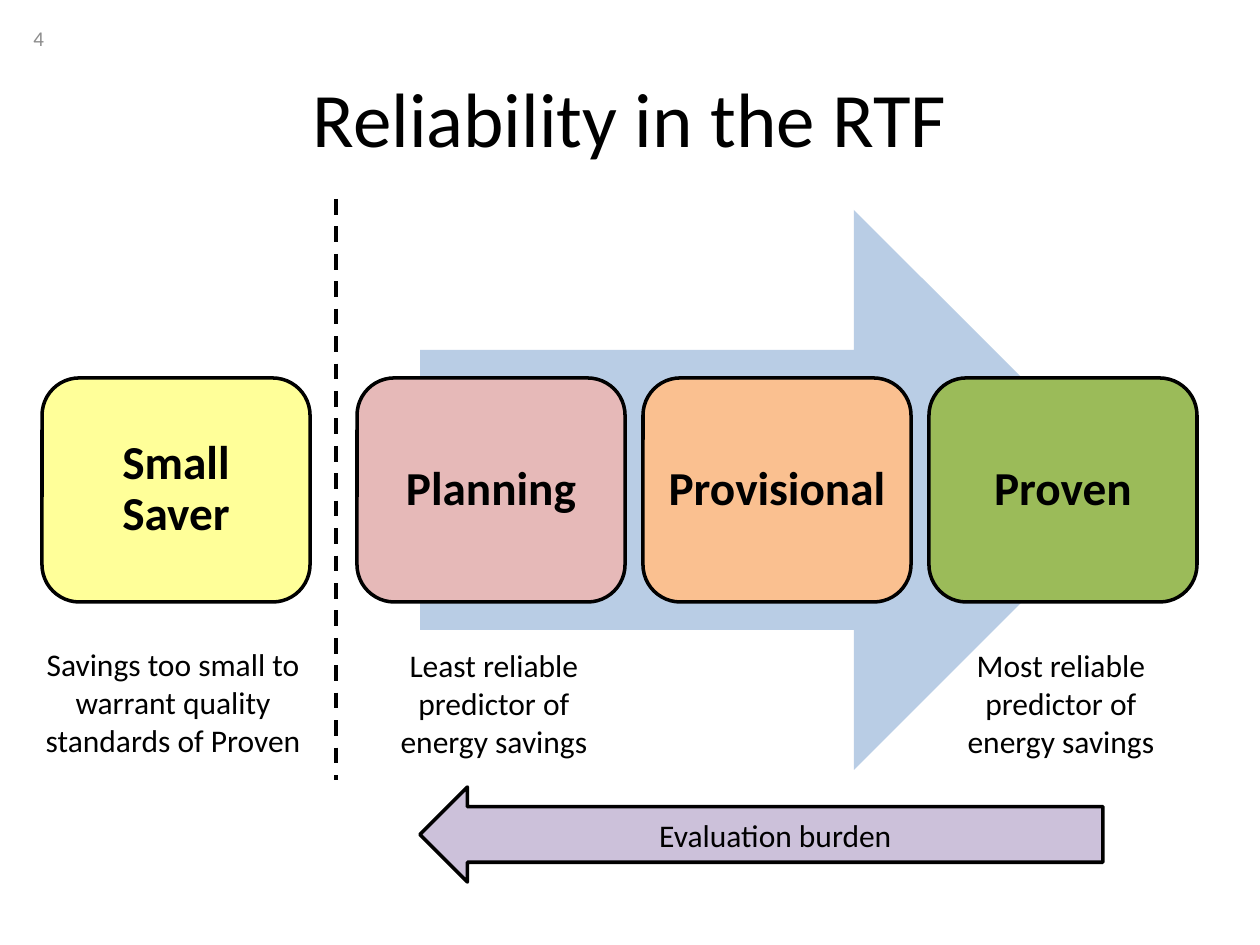
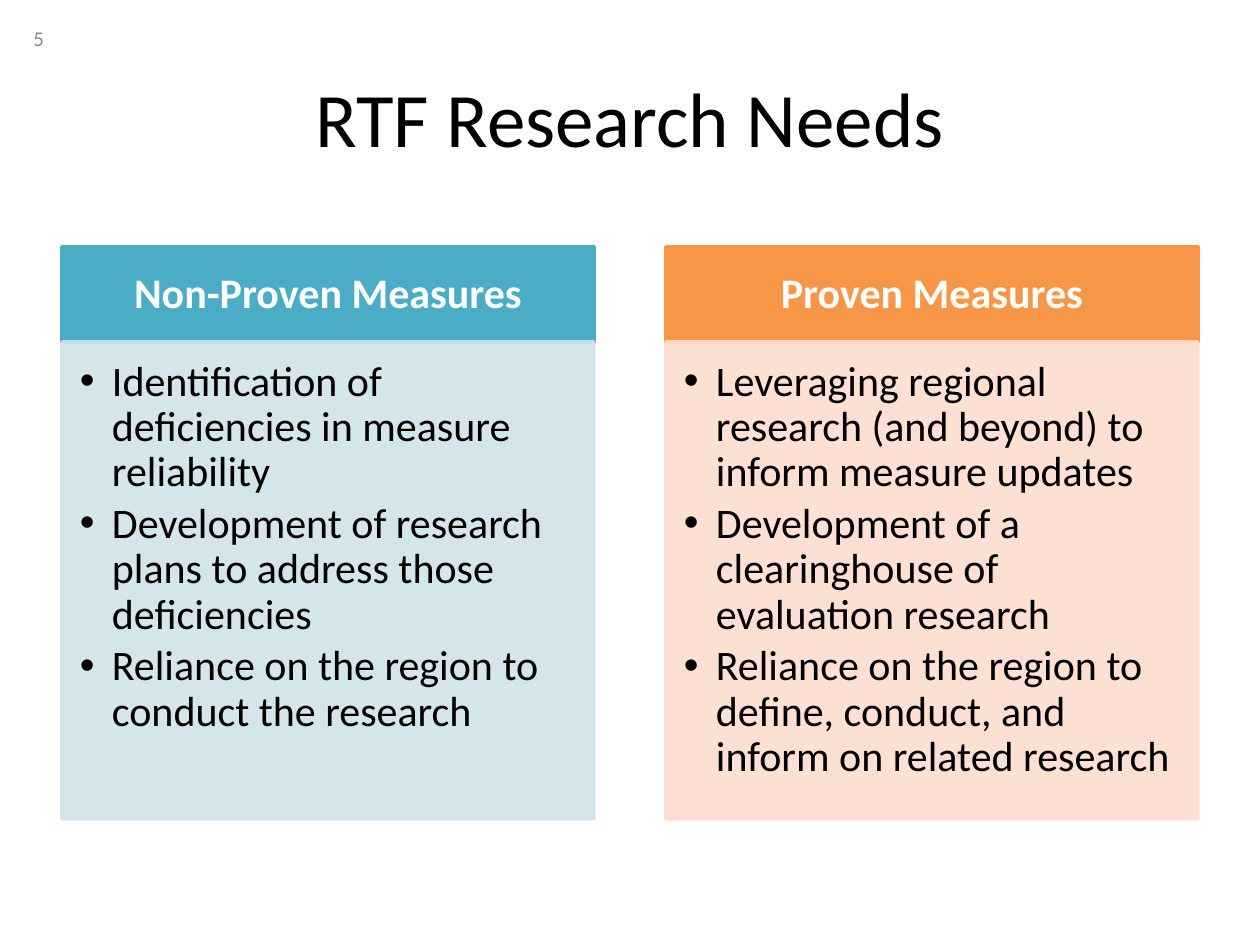
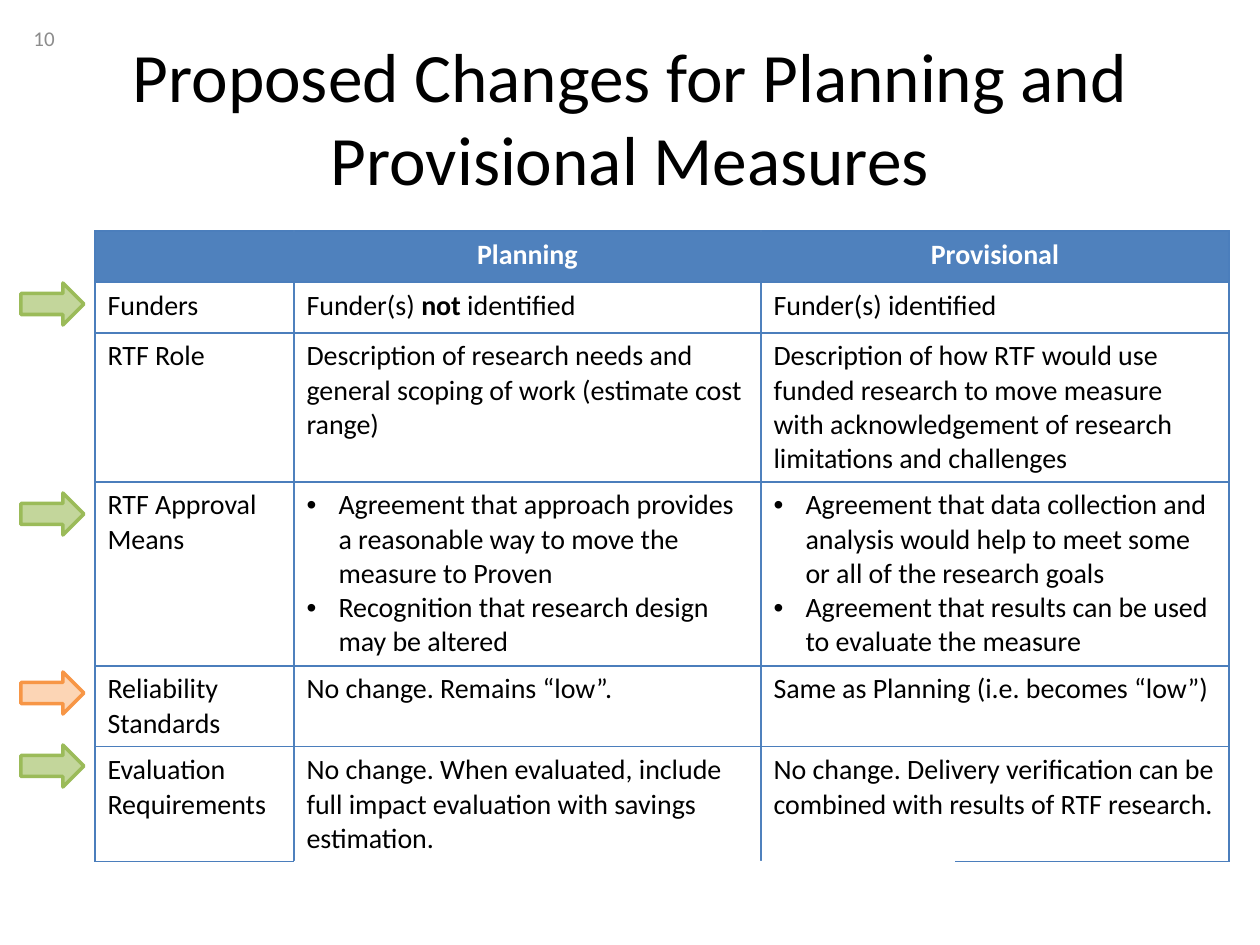
import pptx
import pptx.util
from lxml import etree
from pptx.dml.color import RGBColor
from pptx.enum.dml import MSO_LINE
from pptx.enum.shapes import MSO_CONNECTOR, MSO_SHAPE
from pptx.enum.text import MSO_ANCHOR, PP_ALIGN
from pptx.oxml.ns import qn

FONT = "Calibri"
BLACK = RGBColor(0x00, 0x00, 0x00)
WHITE = RGBColor(0xFF, 0xFF, 0xFF)
GRAY = RGBColor(0x8C, 0x8C, 0x8C)
YELLOW = RGBColor(0xFF, 0xFF, 0x99)
PINK = RGBColor(0xE6, 0xB9, 0xB8)
PEACH = RGBColor(0xFA, 0xC0, 0x90)
GREEN = RGBColor(0x9B, 0xBB, 0x59)
LIGHT_GREEN = RGBColor(0xC3, 0xD6, 0x9B)
ORANGE = RGBColor(0xF7, 0x96, 0x46)
LIGHT_ORANGE = RGBColor(0xFC, 0xD5, 0xB5)
PALE_ORANGE = RGBColor(0xFC, 0xDD, 0xCF)
TEAL = RGBColor(0x4B, 0xAC, 0xC6)
PALE_TEAL = RGBColor(0xD0, 0xE3, 0xEA)
PALE_BLUE = RGBColor(0xB9, 0xCD, 0xE5)
LAVENDER = RGBColor(0xCC, 0xC1, 0xDA)
TABLE_BLUE = RGBColor(0x4F, 0x81, 0xBD)
BORDER_BLUE = RGBColor(0x4B, 0x7E, 0xBC)

TITLES = [
    (4, "Reliability in the RTF", 44),
    (5, "RTF Research Needs", 44),
    (10, "Proposed Changes for Planning and Provisional Measures", 39.6),
]
STAGES = [
    ("Small Saver", YELLOW, 42, 20),
    ("Planning", PINK, 357, 6),
    ("Provisional", PEACH, 643, 6),
    ("Proven", GREEN, 929, 6),
]
CAPTIONS = [
    ("Savings too small to warrant quality standards of Proven", 31, 639, 284),
    ("Least reliable predictor of energy savings", 368, 640, 252),
    ("Most reliable predictor of energy savings", 935, 640, 252),
]
NEEDS = [
    ("Non-Proven Measures", TEAL, PALE_TEAL, [
        "Identification of deficiencies in measure reliability",
        "Development of research plans to address those deficiencies",
        "Reliance on the region to conduct the research",
    ]),
    ("Proven Measures", ORANGE, PALE_ORANGE, [
        "Leveraging regional research (and beyond) to inform measure updates",
        "Development of a clearinghouse of evaluation research",
        "Reliance on the region to define, conduct, and inform on related research",
    ]),
]
CHANGES = [
    ["", "Planning", "Provisional"],
    ["Funders", [("Funder(s) ", False), ("not", True), (" identified", False)],
     "Funder(s) identified"],
    ["RTF Role",
     "Description of research needs and general scoping of work (estimate cost range)",
     "Description of how RTF would use funded research to move measure with "
     "acknowledgement of research limitations and challenges"],
    ["RTF Approval Means",
     ("Agreement that approach provides a reasonable way to move the measure to Proven",
      "Recognition that research design may be altered"),
     ("Agreement that data collection and analysis would help to meet some or all of "
      "the research goals",
      "Agreement that results can be used to evaluate the measure")],
    ["Reliability Standards", "No change. Remains “low”.",
     "Same as Planning (i.e. becomes “low”)"],
    ["Evaluation Requirements",
     "No change. When evaluated, include full impact evaluation with savings estimation.",
     "No change. Delivery verification can be combined with results of RTF research."],
]
COLUMN_WIDTHS = [199, 467, 468]
ROW_HEIGHTS = [51, 51, 149, 184, 81, 115]
ROW_MARKERS = [
    (283, LIGHT_GREEN, GREEN),
    (493, LIGHT_GREEN, GREEN),
    (672, LIGHT_ORANGE, ORANGE),
    (745, LIGHT_GREEN, GREEN),
]


def px(length):
    return pptx.util.Emu(round(length * 914400 / 126))


def add_bullet(paragraph):
    properties = paragraph._p.get_or_add_pPr()
    properties.set("marL", str(px(32)))
    properties.set("indent", str(-px(32)))
    etree.SubElement(properties, qn("a:buFont")).set("typeface", "Arial")
    etree.SubElement(properties, qn("a:buChar")).set("char", "•")


def write(frame, paragraphs, size, color=BLACK, bold=False, align=PP_ALIGN.LEFT,
          anchor=MSO_ANCHOR.TOP, insets=None, spacing=None, after=None, bullets=False):
    frame.word_wrap = True
    frame.vertical_anchor = anchor
    if insets:
        (frame.margin_left, frame.margin_top,
         frame.margin_right, frame.margin_bottom) = map(px, insets)
    for index, content in enumerate(paragraphs):
        paragraph = frame.paragraphs[0] if index == 0 else frame.add_paragraph()
        paragraph.alignment = align
        if spacing:
            paragraph.line_spacing = spacing
        if after:
            paragraph.space_after = pptx.util.Pt(after)
        if bullets:
            add_bullet(paragraph)
        runs = [(content, bold)] if isinstance(content, str) else content
        for text, run_bold in runs:
            run = paragraph.add_run()
            run.text = text
            run.font.name = FONT
            run.font.size = pptx.util.Pt(size)
            run.font.bold = run_bold
            run.font.color.rgb = color


def add_text(slide, box, text, size, **style):
    textbox = slide.shapes.add_textbox(*map(px, box))
    write(textbox.text_frame, [text], size, **style)


def add_shape(slide, kind, box, fill, line=None, opacity=None):
    shape = slide.shapes.add_shape(kind, *map(px, box))
    shape.shadow.inherit = False
    shape.fill.solid()
    shape.fill.fore_color.rgb = fill
    if line is None:
        shape.line.fill.background()
    else:
        shape.line.color.rgb = line
        shape.line.width = pptx.util.Pt(2)
    if opacity:
        for color in shape._element.spPr.iter(qn("a:srgbClr")):
            etree.SubElement(color, qn("a:alpha")).set("val", str(opacity * 1000))
    return shape


def add_slide(presentation, number, title, size):
    slide = presentation.slides.add_slide(presentation.slide_layouts[6])
    add_text(slide, (63, 38, 1134, 157), title, size,
             align=PP_ALIGN.CENTER, anchor=MSO_ANCHOR.MIDDLE)
    add_text(slide, (21, 13, 294, 50), str(number), 12,
             color=GRAY, anchor=MSO_ANCHOR.MIDDLE)
    return slide


def draw_reliability(slide):
    burden = add_shape(slide, MSO_SHAPE.LEFT_ARROW, (420, 787, 683, 95), LAVENDER, BLACK)
    burden.adjustments[0] = 0.585
    write(burden.text_frame, ["Evaluation burden"], 18,
          align=PP_ALIGN.CENTER, anchor=MSO_ANCHOR.MIDDLE)
    add_shape(slide, MSO_SHAPE.RIGHT_ARROW, (420, 210, 714, 560), PALE_BLUE)
    for name, fill, left, inset in STAGES:
        stage = add_shape(slide, MSO_SHAPE.ROUNDED_RECTANGLE,
                          (left, 378, 268, 224), fill, BLACK)
        write(stage.text_frame, [name], 27, bold=True, align=PP_ALIGN.CENTER,
              anchor=MSO_ANCHOR.MIDDLE, insets=(inset, 14, inset, 14), spacing=0.9)
    divider = slide.shapes.add_connector(
        MSO_CONNECTOR.STRAIGHT, px(336), px(199), px(336), px(780))
    divider.line.color.rgb = BLACK
    divider.line.width = pptx.util.Pt(2.25)
    divider.line.dash_style = MSO_LINE.DASH
    etree.SubElement(divider._element.spPr, qn("a:effectLst"))
    for text, left, top, width in CAPTIONS:
        add_text(slide, (left, top, width, 127), text, 18, align=PP_ALIGN.CENTER)


def draw_needs(slide):
    for index, (heading, strong, pale, needs) in enumerate(NEEDS):
        left = 62 + 604 * index
        header = add_shape(slide, MSO_SHAPE.RECTANGLE, (left, 247, 532, 95), strong, strong)
        write(header.text_frame, [heading], 24, color=WHITE, bold=True,
              align=PP_ALIGN.CENTER, anchor=MSO_ANCHOR.MIDDLE,
              insets=(24, 14, 24, 14), spacing=0.9)
        body = add_shape(slide, MSO_SHAPE.RECTANGLE, (left, 342, 532, 477),
                         pale, pale, opacity=90)
        write(body.text_frame, needs, 24, insets=(18, 18, 24, 26),
              spacing=0.9, after=3.6, bullets=True)


def set_borders(cell, column):
    properties = cell._tc.get_or_add_tcPr()
    inner = (TABLE_BLUE, 1)
    outer = (BORDER_BLUE, 0.75)
    edges = {
        "L": outer if column == 0 else inner,
        "R": outer if column == len(COLUMN_WIDTHS) - 1 else inner,
        "T": outer,
        "B": outer,
    }
    for side, (color, width) in edges.items():
        line = etree.SubElement(properties, qn("a:ln" + side))
        line.set("w", str(pptx.util.Pt(width)))
        fill = etree.SubElement(line, qn("a:solidFill"))
        etree.SubElement(fill, qn("a:srgbClr")).set("val", str(color))


def fill_cell(cell, content, is_header):
    if is_header:
        cell.fill.solid()
        cell.fill.fore_color.rgb = TABLE_BLUE
    else:
        cell.fill.background()
    if not content:
        return
    bullets = isinstance(content, tuple)
    write(cell.text_frame, content if bullets else [content], 16,
          color=WHITE if is_header else BLACK, bold=is_header,
          align=PP_ALIGN.CENTER if is_header else PP_ALIGN.LEFT, bullets=bullets)


def draw_changes(slide):
    frame = slide.shapes.add_table(
        len(ROW_HEIGHTS), len(COLUMN_WIDTHS), px(95), px(231),
        px(sum(COLUMN_WIDTHS)), px(sum(ROW_HEIGHTS)))
    table = frame.table
    table.first_row = False
    table.horz_banding = False
    for column, width in zip(table.columns, COLUMN_WIDTHS):
        column.width = px(width)
    for row, height in zip(table.rows, ROW_HEIGHTS):
        row.height = px(height)
    for row, contents in enumerate(CHANGES):
        for column, content in enumerate(contents):
            cell = table.cell(row, column)
            set_borders(cell, column)
            fill_cell(cell, content, row == 0)
    for top, fill, line in ROW_MARKERS:
        add_shape(slide, MSO_SHAPE.RIGHT_ARROW, (21, top, 63, 42), fill, line)
    add_shape(slide, MSO_SHAPE.RECTANGLE, (294, 861, 661, 73), WHITE)


def main():
    presentation = pptx.Presentation()
    presentation.slide_width = px(1260)
    presentation.slide_height = px(945)
    for heading, draw in zip(TITLES, (draw_reliability, draw_needs, draw_changes)):
        draw(add_slide(presentation, *heading))
    presentation.save("out.pptx")


if __name__ == "__main__":
    main()
